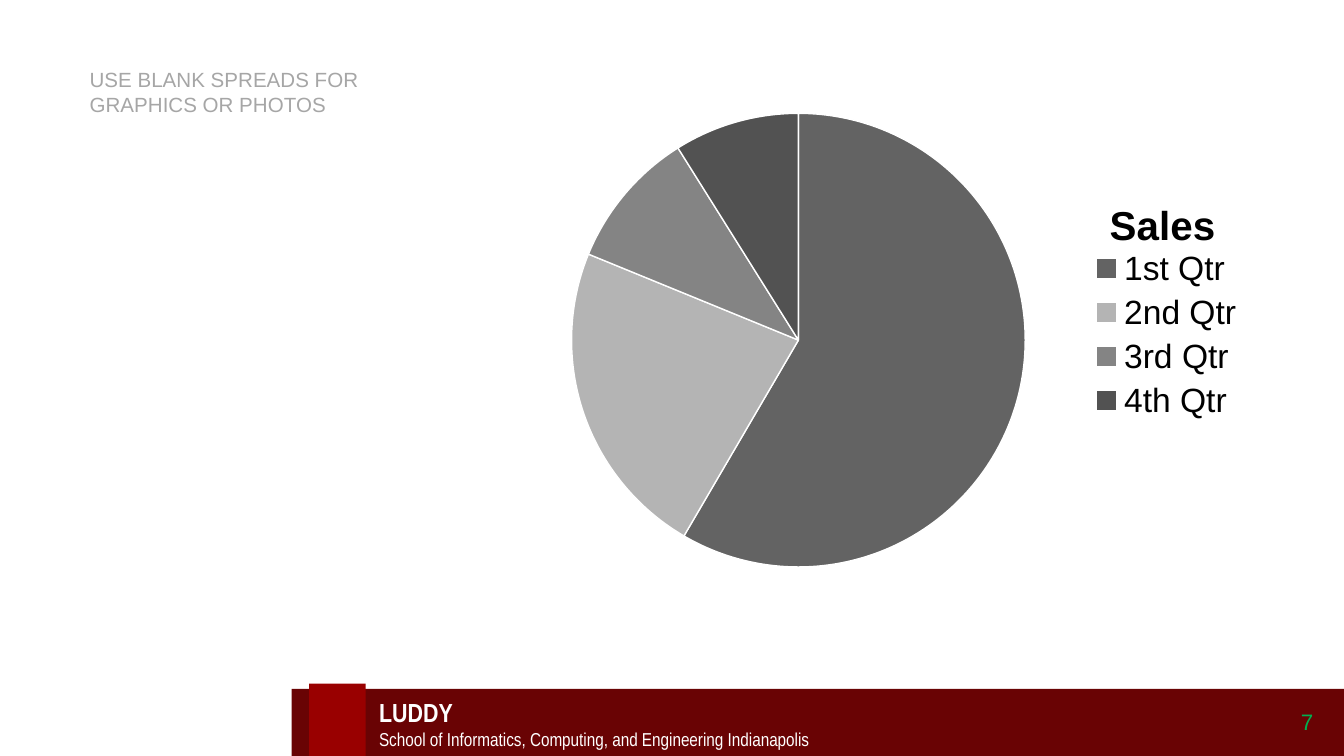
from lxml import etree
from pptx import Presentation
from pptx.chart import data
from pptx.dml.color import RGBColor
from pptx.enum import chart as charts, shapes, text
from pptx.oxml import ns
from pptx.util import Pt

COLORS = {
    "band": "690304", "accent": "990000", "white": "FFFFFF", "black": "000000",
    "number": "00B050", "heading": "A6A6A6",
}
SLICES = {
    "1st Qtr": (59, "636363"),
    "2nd Qtr": (23, "B4B4B4"),
    "3rd Qtr": (10, "848484"),
    "4th Qtr": (9, "525252"),
}


def rgb(value):
    return RGBColor.from_string(COLORS.get(value, value))


def place(parent, x, y, w=None, h=None, inner=False):
    """Give a chart part a manual layout in fractions of the chart."""
    for old in parent.findall(ns.qn("c:layout")):
        parent.remove(old)
    layout = etree.Element(ns.qn("c:layout"))
    manual = etree.SubElement(layout, ns.qn("c:manualLayout"))
    settings = [("layoutTarget", "inner")] if inner else []
    settings += [("xMode", "edge"), ("yMode", "edge"), ("x", x), ("y", y)]
    if w is not None:
        settings += [("w", w), ("h", h)]
    for tag, value in settings:
        etree.SubElement(manual, ns.qn(f"c:{tag}")).set("val", str(value))
    if inner:
        parent.insert(0, layout)
    else:
        anchor = parent.find(ns.qn("c:tx"))
        if anchor is None:
            anchor = parent.find(ns.qn("c:legendPos"))
        anchor.addnext(layout)


class SlideBuilder:
    """Holds the font and the current page."""

    def __init__(self, page, font="Arial"):
        self.page = page
        self.font = font

    def style(self, font, size, color, bold=False, name=None):
        font.name = name or self.font
        font.size = Pt(size)
        font.bold = bold
        font.color.rgb = rgb(color)

    def rect(self, x, y, w, h, color):
        block = self.page.shapes.add_shape(
            shapes.MSO_SHAPE.RECTANGLE, Pt(x), Pt(y), Pt(w), Pt(h))
        block.shadow.inherit = False
        block.fill.solid()
        block.fill.fore_color.rgb = rgb(color)
        block.line.fill.background()

    def title(self, x, y, w, h, words, size, color):
        box = self.page.shapes.title
        box.left, box.top, box.width, box.height = Pt(x), Pt(y), Pt(w), Pt(h)
        frame = box.text_frame
        frame.text = words
        frame.word_wrap = True
        frame.auto_size = text.MSO_AUTO_SIZE.NONE
        frame.vertical_anchor = text.MSO_ANCHOR.TOP
        frame.paragraphs[0].alignment = text.PP_ALIGN.LEFT
        self.style(frame.paragraphs[0].runs[0].font, size, color)

    def label(self, x, y, w, h, lines, color, name=None):
        """Add a text box; lines are (words, size, bold)."""
        box = self.page.shapes.add_textbox(Pt(x), Pt(y), Pt(w), Pt(h))
        frame = box.text_frame
        frame.word_wrap = True
        frame.vertical_anchor = text.MSO_ANCHOR.MIDDLE
        frame.text = "\n".join(words for words, _, _ in lines)
        for para, (_, size, bold) in zip(frame.paragraphs, lines):
            self.style(para.runs[0].font, size, color, bold, name)

    def pie(self, x, y, w, h, heading, slices):
        sales = data.CategoryChartData()
        sales.categories = list(slices)
        sales.add_series(heading, [value for value, _ in slices.values()])
        chart = self.page.shapes.add_chart(
            charts.XL_CHART_TYPE.PIE, Pt(x), Pt(y), Pt(w), Pt(h), sales).chart
        self.style(chart.font, 18, "black")

        chart.has_title = True
        title = chart.chart_title
        title.text_frame.text = heading
        self.style(title.text_frame.paragraphs[0].runs[0].font, 21.6, "black", True)
        title.include_in_layout = False
        place(title._element, 0.82, 0.25)

        chart.has_legend = True
        legend = chart.legend
        legend.position = charts.XL_LEGEND_POSITION.RIGHT
        legend.include_in_layout = False
        self.style(legend.font, 18, "black")
        place(legend._element, 0.8, 0.34, 0.19, 0.32)

        plot = chart.plots[0]
        plot.vary_by_categories = True
        place(plot._element.getparent(), 0.2, 0.11, 0.53, 0.8, inner=True)
        for index, (_, color) in enumerate(slices.values()):
            point = plot.series[0].points[index].format
            point.fill.solid()
            point.fill.fore_color.rgb = rgb(color)
            point.line.color.rgb = rgb("white")
            point.line.width = Pt(0.75)


def main():
    deck = Presentation()
    deck.slide_width, deck.slide_height = Pt(720), Pt(405)
    page = deck.slides.add_slide(deck.slide_layouts[5])
    builder = SlideBuilder(page)

    builder.rect(156.3, 369, 563.7, 36, "band")
    builder.rect(165.6, 366.3, 30.4, 38.7, "accent")
    builder.label(196, 369.5, 284, 36, [
        ("LUDDY", 14, True),
        ("School of Informatics, Computing, and Engineering Indianapolis", 10, False),
    ], "white", "Arial Narrow")
    builder.label(689.8, 375.6, 30, 21.8, [("7", 12, False)], "number")
    builder.title(40.8, 32.4, 200, 34, "USE BLANK SPREADS FOR GRAPHICS OR PHOTOS",
                  11, "heading")
    builder.pie(214.5, 26.6, 458.6, 305.3, "Sales", SLICES)
    deck.save("out.pptx")


if __name__ == "__main__":
    main()
